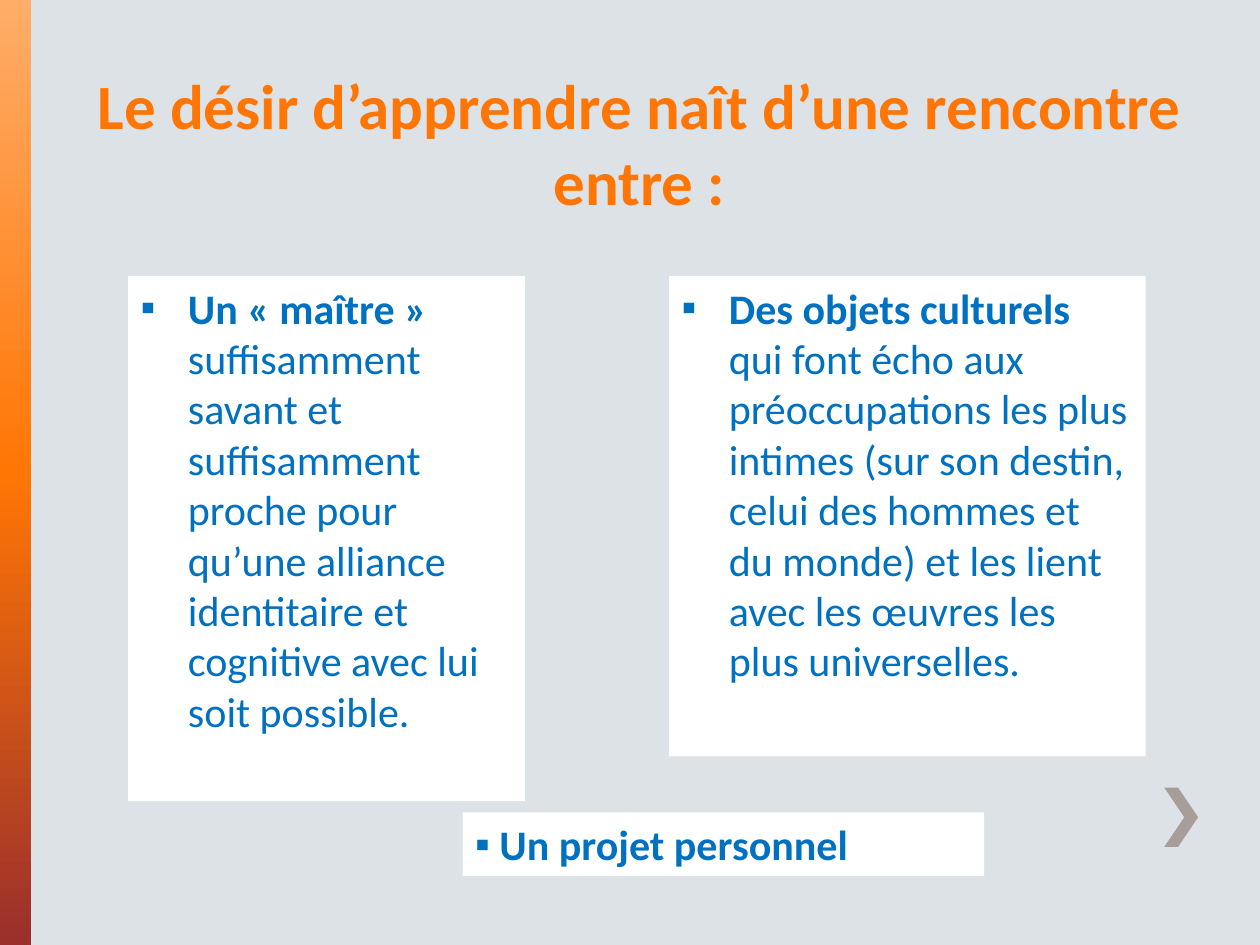
from copy import deepcopy

from lxml.etree import SubElement as Sub
from pptx import Presentation as Deck
from pptx.dml.color import RGBColor as Rgb
from pptx.enum.shapes import MSO_SHAPE as Kind
from pptx.enum.text import MSO_ANCHOR as Anchor, MSO_AUTO_SIZE as Fit, PP_ALIGN as Align
from pptx.oxml.ns import qn
from pptx.util import Pt

BACK = Rgb(0xDD, 0xE2, 0xE7)
WHITE = Rgb(0xFF, 0xFF, 0xFF)
BLUE = Rgb(0x00, 0x70, 0xC0)
GRAY = Rgb(0xA7, 0x9D, 0x99)
PEACH = Rgb(0xFF, 0xAD, 0x69)
ORANGE = Rgb(0xFF, 0x76, 0x05)
RUST = Rgb(0x9A, 0x2F, 0x2C)

HEAD = {"name": "Calibri", "size": Pt(36), "bold": True}
TEXT = {"name": "Calibri", "size": Pt(24)}


def apply(item, form):
    for key, value in form.items():
        setattr(item, key, value)


def place(shape, left, top, width, height):
    apply(shape, {"left": Pt(left), "top": Pt(top),
                  "width": Pt(width), "height": Pt(height)})


def write(para, text, form, color):
    run = para.add_run()
    run.text = text
    apply(run.font, form)
    run.font.color.rgb = color


def bullet(para, indent):
    props = para._p.get_or_add_pPr()
    props.set("marL", str(Pt(indent)))
    props.set("indent", str(-Pt(indent)))
    Sub(props, qn("a:buFont"), typeface="Arial")
    Sub(props, qn("a:buChar"), char="▪")


def add_title(shape, text):
    place(shape, 19.4, 26, 692, 102.2)
    apply(shape.text_frame, {"vertical_anchor": Anchor.BOTTOM,
                             "auto_size": Fit.NONE, "word_wrap": True})
    para = shape.text_frame.paragraphs[0]
    para.alignment = Align.CENTER
    write(para, text, HEAD, ORANGE)


def add_card(shape, box, parts, indent=27, gap=4.8):
    place(shape, *box)
    shape.fill.solid()
    shape.fill.fore_color.rgb = WHITE
    apply(shape.text_frame, {"vertical_anchor": Anchor.TOP,
                             "auto_size": Fit.NONE, "word_wrap": True})
    para = shape.text_frame.paragraphs[0]
    para.space_before = Pt(gap)
    bullet(para, indent)
    for text, bold in parts:
        write(para, text, {**TEXT, "bold": bold}, BLUE)


def add_band(shapes):
    band = shapes.add_shape(Kind.RECTANGLE, 0, 0, Pt(18), Pt(540))
    band.shadow.inherit = False
    band.line.fill.background()
    band.fill.gradient()
    band.fill.gradient_angle = 270
    stops = band._element.spPr.find(qn("a:gradFill")).find(qn("a:gsLst"))
    stops.append(deepcopy(stops[-1]))
    tones = ((0, PEACH), (0.5, ORANGE), (1, RUST))
    for stop, (spot, color) in zip(band.fill.gradient_stops, tones):
        stop.position = spot
        stop.color.rgb = color


def add_arrow(shapes):
    left, notch, right = 665.3, 673.2, 684.7
    top, mid, base = 450, 467, 484
    dots = [(left, top), (676.8, mid), (left, base), (notch, base), (right, mid)]
    pen = shapes.build_freeform(Pt(notch), Pt(top))
    pen.add_line_segments([(Pt(x), Pt(y)) for x, y in dots], close=True)
    arrow = pen.convert_to_shape()
    arrow.shadow.inherit = False
    arrow.line.fill.background()
    arrow.fill.solid()
    arrow.fill.fore_color.rgb = GRAY


def main():
    deck = Deck()
    apply(deck, {"slide_width": Pt(720), "slide_height": Pt(540)})
    slide = deck.slides.add_slide(deck.slide_layouts[1])
    slide.background.fill.solid()
    slide.background.fill.fore_color.rgb = BACK
    shapes = slide.shapes
    add_band(shapes)
    add_arrow(shapes)
    add_title(shapes.title, "Le désir d’apprendre naît d’une rencontre entre :")
    add_card(slide.placeholders[1], (73.2, 157.6, 226.8, 300.2), [
        ("Un « maître » ", True),
        ("suffisamment savant et suffisamment proche pour qu’une alliance "
         "identitaire et cognitive avec lui soit possible.", False)])
    add_card(shapes.add_textbox(0, 0, 0, 0), (382.4, 157.6, 272.2, 274.6), [
        ("Des objets culturels ", True),
        ("qui font écho aux préoccupations les plus intimes (sur son destin, "
         "celui des hommes et du monde) et les lient avec les œuvres les plus "
         "universelles.", False)])
    add_card(shapes.add_textbox(0, 0, 0, 0), (264.4, 464.2, 298, 36.4), [
        (" ", False), ("Un projet personnel", True)], indent=0, gap=0)
    deck.save("out.pptx")


if __name__ == "__main__":
    main()
